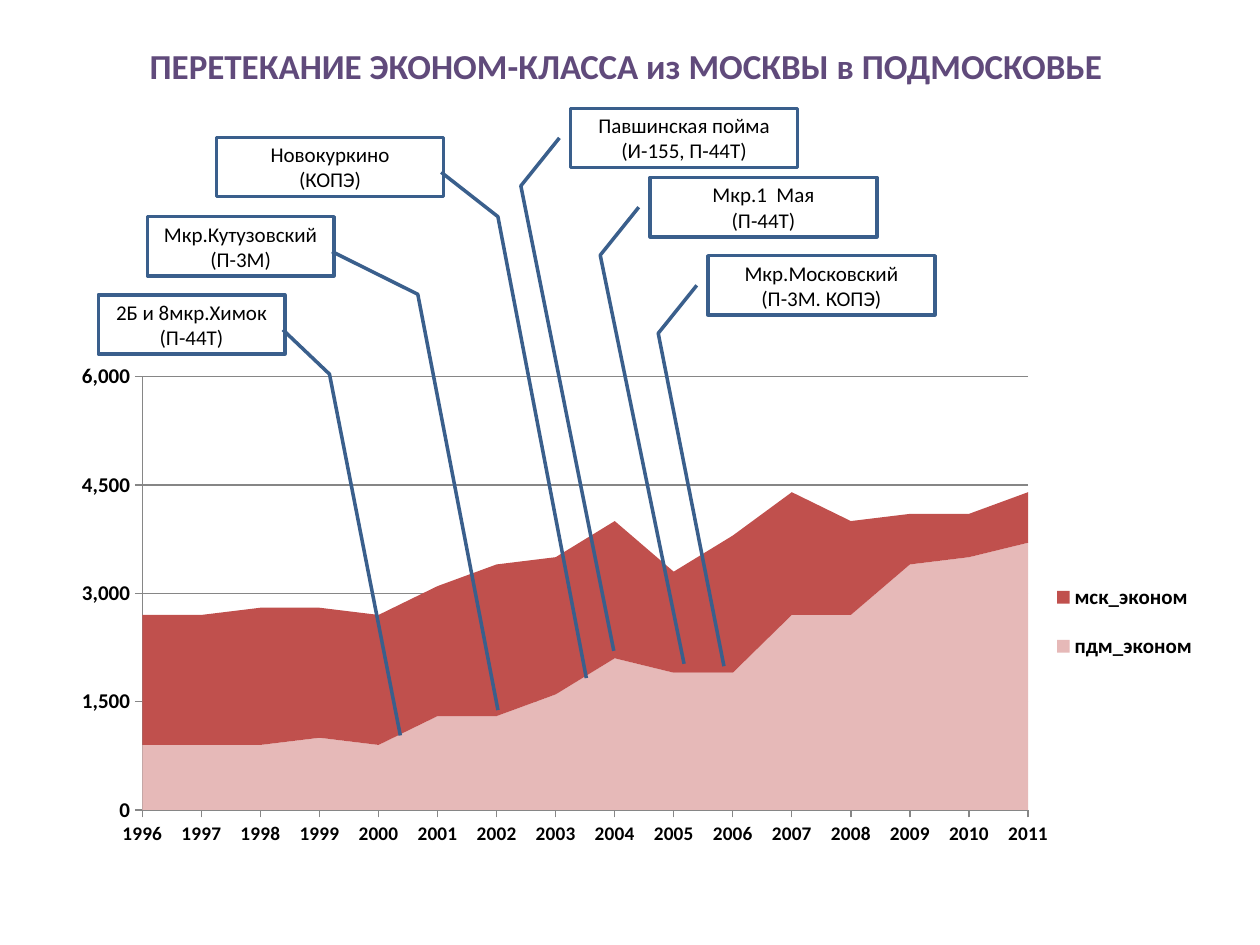
from lxml.etree import SubElement
from pptx import Presentation
from pptx.chart.data import CategoryChartData
from pptx.dml.color import RGBColor
from pptx.enum.chart import XL_CHART_TYPE as CT, XL_LEGEND_POSITION as LP, XL_TICK_MARK as TM
from pptx.enum.shapes import MSO_SHAPE as SHAPE
from pptx.enum.text import MSO_ANCHOR as ANCHOR, PP_ALIGN as ALIGN
from pptx.oxml import parse_xml
from pptx.oxml.ns import nsdecls, qn
from pptx.util import Inches, Pt

# Content
TITLE = "ПЕРЕТЕКАНИЕ ЭКОНОМ-КЛАССА из МОСКВЫ в ПОДМОСКОВЬЕ"
YEARS = [str(year) for year in range(1996, 2012)]
SERIES = [
    ("пдм_эконом", "region", [900, 900, 900, 1000, 900, 1300, 1300, 1600,
                              2100, 1900, 1900, 2700, 2700, 3400, 3500, 3700]),
    ("мск_эконом", "moscow", [1800, 1800, 1900, 1800, 1800, 1800, 2100, 1900,
                              1900, 1400, 1900, 1700, 1300, 700, 600, 700]),
]
# Leader points are (y, x) pairs, as fractions of the box height and width
FROM_RIGHT, FROM_LEFT = (0.59, 0.99), (0.5, -0.05)
LEFT_BEND = (1.31, -0.22)
CALLOUTS = [  # lines, left, top, width, start, bend, end
    (("2Б и 8мкр.Химок", "(П-44Т)"), 0.78, 2.34, 1.48, FROM_RIGHT, (1.34, 1.24), (7.44, 1.62)),
    (("Мкр.Кутузовский", "(П-3М)"), 1.17, 1.72, 1.48, FROM_RIGHT, (1.31, 1.45), (8.33, 1.88)),
    (("Новокуркино", "(КОПЭ)"), 1.72, 1.09, 1.8, FROM_RIGHT, (1.34, 1.24), (9.13, 1.63)),
    (("Мкр.1  Мая", "(П-44Т)"), 5.16, 1.41, 1.8, FROM_LEFT, LEFT_BEND, (8.21, 0.15)),
    (("Павшинская пойма", "(И-155, П-44Т)"), 4.53, 0.86, 1.8, FROM_LEFT, LEFT_BEND, (9.16, 0.19)),
    (("Мкр.Московский", "(П-3М. КОПЭ)"), 5.62, 2.03, 1.8, FROM_LEFT, LEFT_BEND, (6.93, 0.07)),
]
BOX_HEIGHT = 0.47
CHART_BOX = (0.47, 2.81, 9.3, 3.98)
PLOT_BOX = (1.13, 2.99, 7.03, 3.44)
LEGEND_BOX = (8.25, 4.45, 1.35, 0.97)

THEME = {
    "font": "Calibri",
    "color": {name: RGBColor.from_string(value) for name, value in {
        "title": "604A7B", "text": "000000", "line": "3A5F8C", "axis": "868686",
        "region": "E6B9B8", "moscow": "C0504D"}.items()},
    "size": {"title": 20, "callout": 12, "chart": 10, "years": 11, "values": 12, "legend": 12},
}


def style_font(font, size, color="text", bold=False):
    font.name = THEME["font"]
    font.size = Pt(THEME["size"][size])
    font.color.rgb = THEME["color"][color]
    font.bold = bold


def chart_layout(box, inner=False):
    """Return a manual layout for a slide area, in fractions of the chart."""
    left, top, width, height = CHART_BOX
    values = {"x": (box[0] - left) / width, "y": (box[1] - top) / height,
              "w": box[2] / width, "h": box[3] / height}
    layout = parse_xml(f"<c:layout {nsdecls('c')}><c:manualLayout/></c:layout>")
    manual = layout[0]
    if inner:
        SubElement(manual, qn("c:layoutTarget"), val="inner")
    for name in "xy":
        SubElement(manual, qn(f"c:{name}Mode"), val="edge")
    for name, value in values.items():
        SubElement(manual, qn(f"c:{name}"), val=f"{value:.4f}")
    return layout


def add_area_chart(slide):
    data = CategoryChartData(number_format="#,##0")
    data.categories = YEARS
    for name, _, values in SERIES:
        data.add_series(name, values)
    chart = slide.shapes.add_chart(CT.AREA_STACKED, *map(Inches, CHART_BOX), data).chart
    chart.has_title = False
    style_font(chart.font, "chart")
    for series, (_, color, _) in zip(chart.plots[0].series, SERIES):
        series.format.fill.solid()
        series.format.fill.fore_color.rgb = THEME["color"][color]

    # Axes
    for axis, size in ((chart.category_axis, "years"), (chart.value_axis, "values")):
        style_font(axis.tick_labels.font, size, bold=True)
        axis.major_tick_mark = TM.OUTSIDE
        axis.minor_tick_mark = TM.NONE
        axis.format.line.color.rgb = THEME["color"]["axis"]
    chart.category_axis.has_major_gridlines = False
    axis = chart.value_axis
    axis.minimum_scale, axis.maximum_scale, axis.major_unit = 0, 6000, 1500
    axis.tick_labels.number_format = "#,##0"
    axis.tick_labels.number_format_is_linked = False
    axis.has_major_gridlines = True
    axis.major_gridlines.format.line.color.rgb = THEME["color"]["axis"]

    # Legend and plot positions
    chart.has_legend = True
    legend = chart.legend
    legend.position = LP.RIGHT
    legend.include_in_layout = False
    style_font(legend.font, "legend", bold=True)
    plot_area = chart.plots[0]._element.getparent()
    for element in (plot_area, legend._element):
        for old in element.findall(qn("c:layout")):
            element.remove(old)
    plot_area.insert(0, chart_layout(PLOT_BOX, inner=True))
    legend._element.find(qn("c:legendPos")).addnext(chart_layout(LEGEND_BOX))


def add_callout(slide, lines, left, top, width, *points):
    sp = slide.shapes.add_shape(SHAPE.LINE_CALLOUT_2, Inches(left), Inches(top),
                                Inches(width), Inches(BOX_HEIGHT))
    sp.shadow.inherit = False
    sp.fill.background()
    sp.line.color.rgb = THEME["color"]["line"]
    sp.line.width = Pt(2)
    for i, value in enumerate(value for point in points for value in point):
        sp.adjustments[i] = value
    tf = sp.text_frame
    tf.word_wrap = True
    tf.vertical_anchor = ANCHOR.MIDDLE
    tf.text = "\n".join(lines)
    for p in tf.paragraphs:
        p.alignment = ALIGN.CENTER
        style_font(p.font, "callout")


def main():
    prs = Presentation()
    prs.slide_width, prs.slide_height = Inches(10), Inches(7.5)
    slide = prs.slides.add_slide(prs.slide_layouts[5])

    # Title, raised by its bottom margin
    title = slide.shapes.title
    title.left, title.top, title.width, title.height = map(Inches, (0.47, 0.23, 9, 1.25))
    tf = title.text_frame
    tf.text = TITLE
    tf.vertical_anchor = ANCHOR.MIDDLE
    tf.margin_bottom = Inches(0.72)
    p = tf.paragraphs[0]
    p.alignment = ALIGN.CENTER
    style_font(p.font, "title", "title", bold=True)

    add_area_chart(slide)
    for callout in CALLOUTS:
        add_callout(slide, *callout)
    prs.save("out.pptx")


if __name__ == "__main__":
    main()
